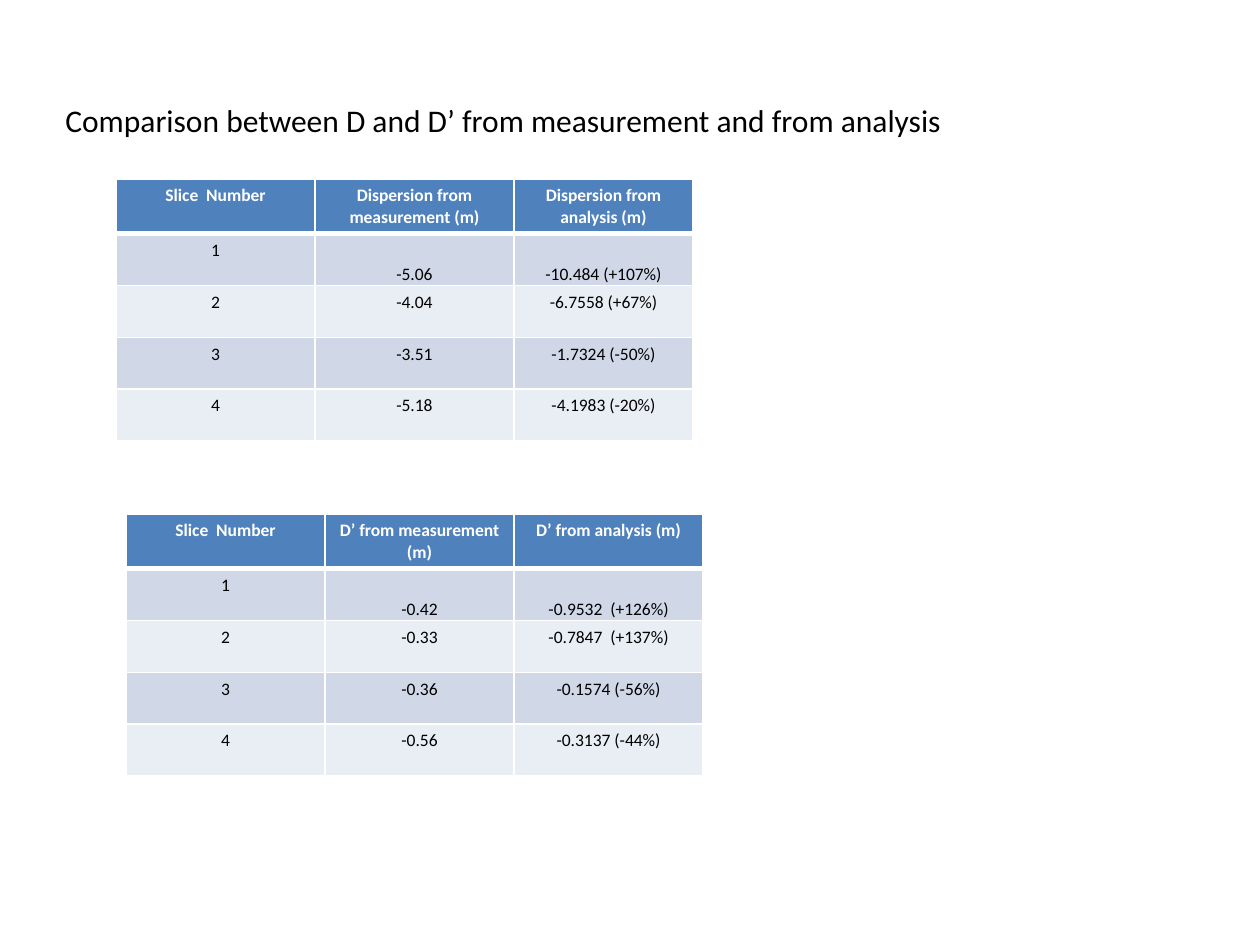
from lxml import etree
from pptx import Presentation, util as u
from pptx.dml.color import RGBColor
from pptx.enum import text
from pptx.oxml import ns

PX = u.Inches(1) / 126
BLACK = RGBColor(0x00, 0x00, 0x00)
WHITE = RGBColor(0xFF, 0xFF, 0xFF)
HEADER_BLUE = RGBColor(0x4F, 0x81, 0xBD)
BANDS = [RGBColor(0xE9, 0xED, 0xF4), RGBColor(0xD0, 0xD8, 0xE8)]

TABLES = [
    (116, 179, [199, 199, 179], [
        ["Slice  Number", "Dispersion from measurement (m)", "Dispersion from analysis (m)"],
        ["1", "-5.06", "-10.484 (+107%)"],
        ["2", "-4.04", "-6.7558 (+67%)"],
        ["3", "-3.51", "-1.7324 (-50%)"],
        ["4", "-5.18", "-4.1983 (-20%)"],
    ]),
    (126, 514, [199, 189, 189], [
        ["Slice  Number", "D’ from measurement (m)", "D’ from analysis (m)"],
        ["1", "-0.42", "-0.9532  (+126%)"],
        ["2", "-0.33", "-0.7847  (+137%)"],
        ["3", "-0.36", "-0.1574 (-56%)"],
        ["4", "-0.56", "-0.3137 (-44%)"],
    ]),
]


def px(length):
    """Turn whole px into EMU."""
    return u.Emu(round(length * PX))


def border_cell(cell, row_index):
    """Give a cell white borders, thicker between header and body."""
    points = {"lnL": 1, "lnR": 1, "lnT": 3 if row_index == 1 else 1, "lnB": 3 if row_index == 0 else 1}
    properties = cell._tc.get_or_add_tcPr()
    for position, (side, width) in enumerate(points.items()):
        line = etree.Element(ns.qn("a:" + side), w=str(u.Pt(width)))
        fill = etree.SubElement(line, ns.qn("a:solidFill"))
        etree.SubElement(fill, ns.qn("a:srgbClr"), val=str(WHITE))
        properties.insert(position, line)


deck = Presentation()
deck.slide_width, deck.slide_height = px(1260), px(945)
page = deck.slides.add_slide(deck.slide_layouts[6])

title_box = page.shapes.add_textbox(px(53), px(95), px(912), px(51))
title_box.text_frame.word_wrap = False
title_box.text_frame.auto_size = text.MSO_AUTO_SIZE.SHAPE_TO_FIT_TEXT
span = title_box.text_frame.paragraphs[0].add_run()
span.text = "Comparison between D and D’ from measurement and from analysis"
span.font.name = "Calibri"
span.font.size = u.Pt(18)
span.font.color.rgb = BLACK

for left, top, widths, rows in TABLES:
    table = page.shapes.add_table(
        len(rows), len(widths), px(left), px(top), px(sum(widths)), px(259)).table
    for column, width in zip(table.columns, widths):
        column.width = px(width)

    for row_index, row in enumerate(rows):
        is_header = row_index == 0
        for column_index, wording in enumerate(row):
            cell = table.cell(row_index, column_index)
            cell.fill.solid()
            cell.fill.fore_color.rgb = HEADER_BLUE if is_header else BANDS[row_index % 2]
            border_cell(cell, row_index)
            if row_index == 1 and column_index > 0:
                cell.vertical_anchor = text.MSO_ANCHOR.BOTTOM
                cell.margin_left = cell.margin_right = 0
                cell.margin_top = cell.margin_bottom = 0
            para = cell.text_frame.paragraphs[0]
            para.alignment = text.PP_ALIGN.CENTER
            span = para.add_run()
            span.text = wording
            span.font.name = "Calibri"
            span.font.size = u.Pt(10)
            span.font.bold = is_header
            span.font.color.rgb = WHITE if is_header else BLACK

deck.save("out.pptx")
